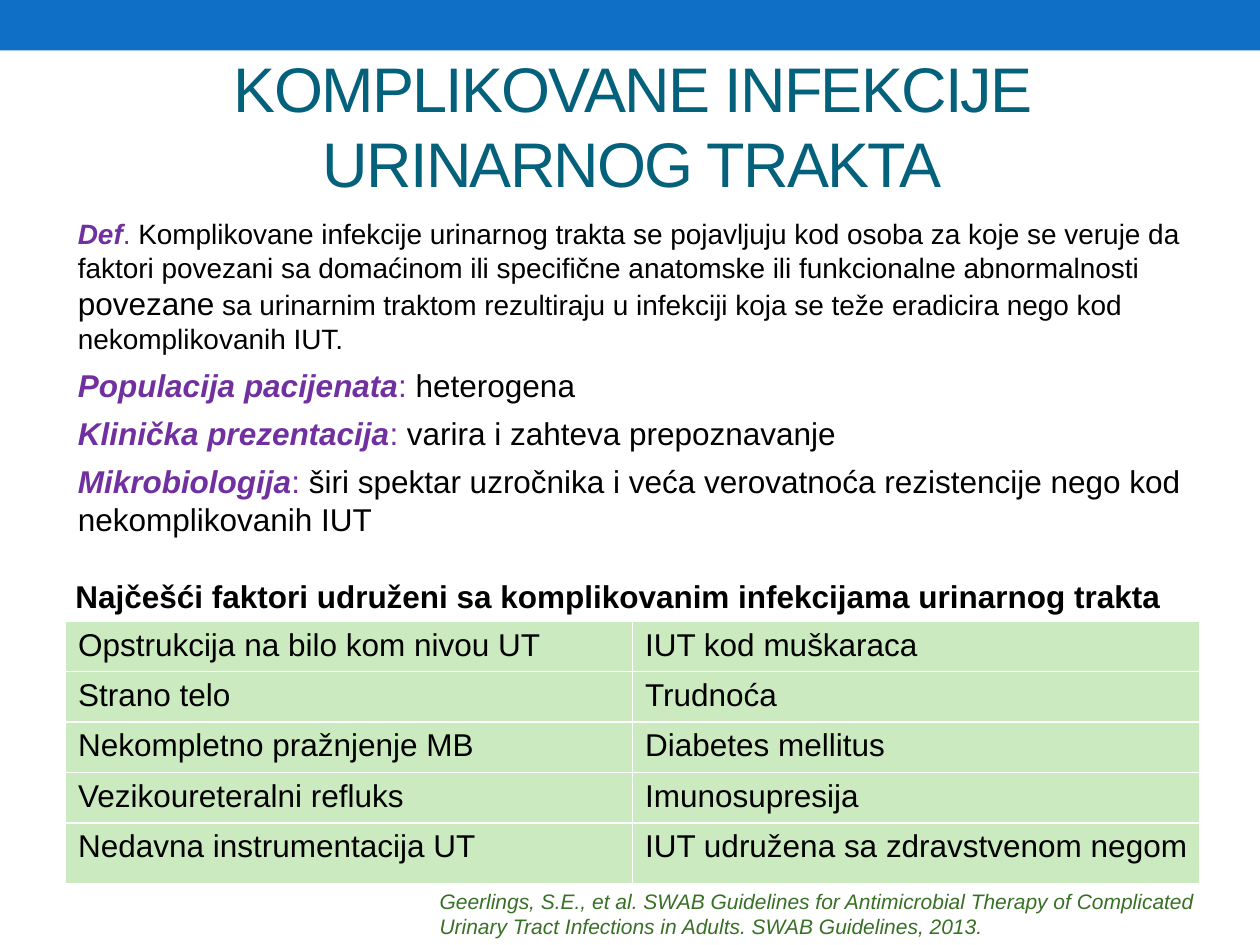
from lxml import etree
from pptx import Presentation
from pptx.dml.color import RGBColor
from pptx.enum.shapes import MSO_SHAPE
from pptx.enum.text import MSO_ANCHOR, PP_ALIGN
from pptx.oxml.ns import qn
from pptx.util import Inches, Pt

FONT = "Arial"
BLUE = RGBColor(0x0F, 0x6F, 0xC6)
TEAL = RGBColor(0x04, 0x61, 0x7B)
PURPLE = RGBColor(0x70, 0x30, 0xA0)
BLACK = RGBColor(0, 0, 0)
WHITE = RGBColor(0xFF, 0xFF, 0xFF)
PALE_GREEN = RGBColor(0xCB, 0xEA, 0xC0)
DARK_GREEN = RGBColor(0x38, 0x70, 0x26)
TOP, MIDDLE = MSO_ANCHOR.TOP, MSO_ANCHOR.MIDDLE
LEFT, CENTER = PP_ALIGN.LEFT, PP_ALIGN.CENTER

TITLE = "KOMPLIKOVANE INFEKCIJE URINARNOG TRAKTA"
# Each paragraph: term, mark after it, then (text, size) pieces
DEFINITIONS = [
    ("Def", ".", [
        (" Komplikovane infekcije urinarnog trakta se pojavljuju kod osoba za koje "
         "se veruje da faktori povezani sa domaćinom ili specifične anatomske ili "
         "funkcionalne abnormalnosti ", 16),
        ("povezane", 18),
        (" sa urinarnim traktom rezultiraju u infekciji koja se teže eradicira nego "
         "kod nekomplikovanih IUT.", 16)]),
    ("Populacija pacijenata", ":", [(" heterogena", 18)]),
    ("Klinička prezentacija", ":", [(" varira i zahteva prepoznavanje", 18)]),
    ("Mikrobiologija", ":", [
        (" širi spektar uzročnika i veća verovatnoća rezistencije nego kod "
         "nekomplikovanih IUT", 18)]),
]
TABLE_HEADING = "Najčešći faktori udruženi sa komplikovanim infekcijama urinarnog trakta"
FACTORS = [
    ("Opstrukcija na bilo kom nivou UT", "IUT kod muškaraca"),
    ("Strano telo", "Trudnoća"),
    ("Nekompletno pražnjenje MB", "Diabetes mellitus"),
    ("Vezikoureteralni refluks", "Imunosupresija"),
    ("Nedavna instrumentacija UT", "IUT udružena sa zdravstvenom negom"),
]
ROW_HEIGHTS = [0.4, 0.4, 0.4, 0.4, 0.48]
COLUMN_WIDTH = 4.5
SOURCE = ("Geerlings, S.E., et al. SWAB Guidelines for Antimicrobial Therapy of "
          "Complicated Urinary Tract Infections in Adults. SWAB Guidelines, 2013.")


def add_span(para, text, size=18, color=BLACK, bold=False, italic=False, spacing=0):
    span = para.add_run()
    span.text = text
    font = span.font
    font.name, font.size, font.bold, font.italic = FONT, Pt(size), bold, italic
    font.color.rgb = color
    if spacing:
        font._element.set("spc", str(spacing * 100))


def add_box(page, left, top, width, height, anchor=TOP):
    box = page.shapes.add_textbox(*map(Inches, (left, top, width, height)))
    box.text_frame.word_wrap = True
    box.text_frame.vertical_anchor = anchor
    return box.text_frame


def add_text(page, place, text, align=LEFT, anchor=TOP, **style):
    para = add_box(page, *place, anchor=anchor).paragraphs[0]
    para.alignment = align
    add_span(para, text, **style)


def add_definitions(page):
    frame = add_box(page, 0.52, 1.67, 8.96, 2.68)
    for index, (term, mark, pieces) in enumerate(DEFINITIONS):
        para = frame.add_paragraph() if index else frame.paragraphs[0]
        para.space_after = Pt(6)
        size = pieces[0][1]
        add_span(para, term, size, PURPLE, bold=True, italic=True)
        add_span(para, mark, size, PURPLE)
        for text, piece_size in pieces:
            add_span(para, text, piece_size)


def add_borders(cell, color, width):
    """Put a solid line on all four sides, ahead of the cell's fill."""
    properties = cell._tc.get_or_add_tcPr()
    for index, side in enumerate(("lnL", "lnR", "lnT", "lnB")):
        line = etree.Element(qn(f"a:{side}"), w=str(Pt(width)))
        fill = etree.SubElement(line, qn("a:solidFill"))
        etree.SubElement(fill, qn("a:srgbClr"), val=str(color))
        properties.insert(index, line)


def add_factor_table(page):
    columns = len(FACTORS[0])
    table = page.shapes.add_table(
        len(FACTORS), columns, Inches(0.52), Inches(4.93),
        Inches(COLUMN_WIDTH * columns), Inches(sum(ROW_HEIGHTS))).table
    table.first_row = table.horz_banding = False
    for column in table.columns:
        column.width = Inches(COLUMN_WIDTH)
    for row, height, texts in zip(table.rows, ROW_HEIGHTS, FACTORS):
        row.height = Inches(height)
        for cell, text in zip(row.cells, texts):
            cell.margin_left, cell.margin_right = Inches(0.1), 0
            cell.margin_top = cell.margin_bottom = Inches(0.05)
            cell.fill.solid()
            cell.fill.fore_color.rgb = PALE_GREEN
            add_borders(cell, WHITE, 1)
            add_span(cell.text_frame.paragraphs[0], text)
    for cell in table.rows[len(FACTORS) - 1].cells:
        cell.margin_bottom = 0


def main():
    deck = Presentation()
    deck.slide_width, deck.slide_height = Inches(10), Inches(7.5)
    page = deck.slides.add_slide(deck.slide_layouts[6])

    band = page.shapes.add_shape(MSO_SHAPE.RECTANGLE, 0, 0, deck.slide_width, Inches(0.4))
    band.shadow.inherit = False
    band.fill.solid()
    band.fill.fore_color.rgb = BLUE
    band.line.fill.background()

    add_text(page, (0.52, 0.42, 9, 1.14), TITLE, CENTER, MIDDLE,
             size=36, color=TEAL, spacing=-1)
    add_definitions(page)
    add_factor_table(page)
    add_text(page, (0.5, 4.53, 8.98, 0.4), TABLE_HEADING, bold=True)
    add_text(page, (3.39, 7, 6.61, 0.5), SOURCE, size=12, color=DARK_GREEN, italic=True)
    deck.save("out.pptx")


if __name__ == "__main__":
    main()
